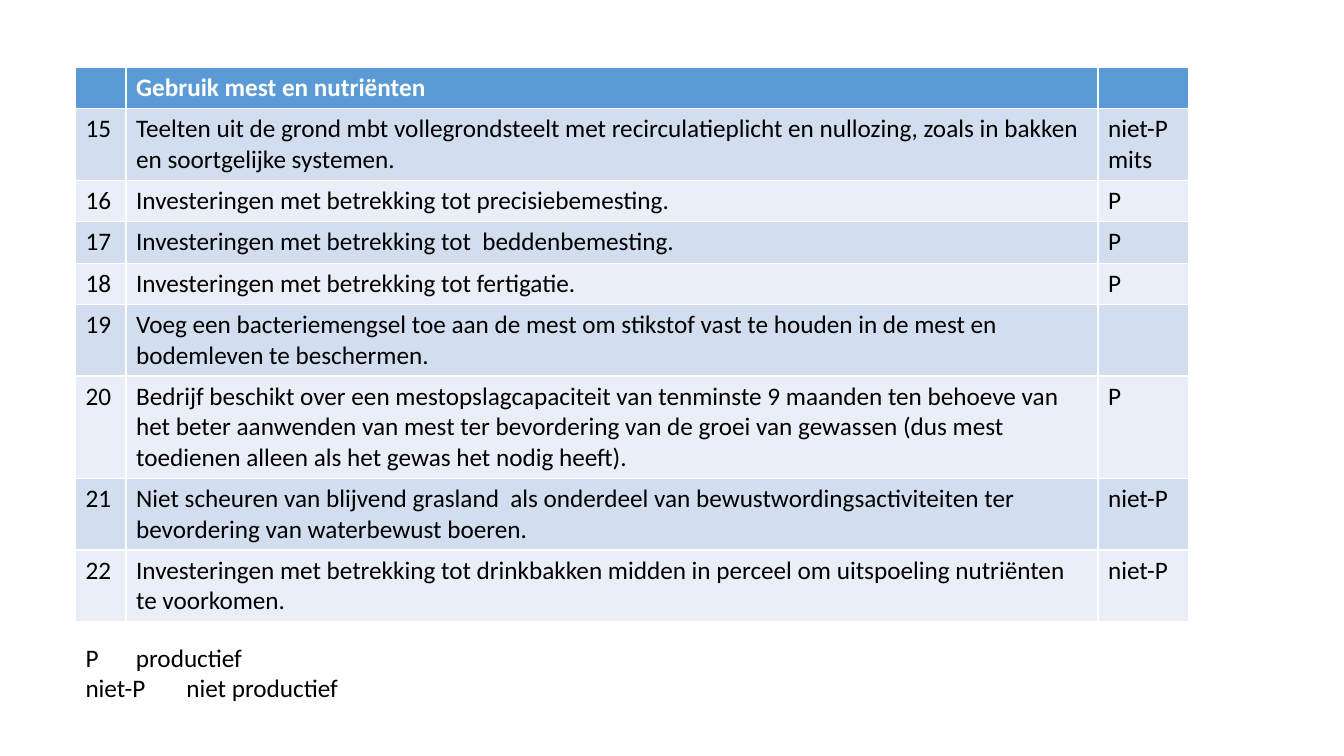
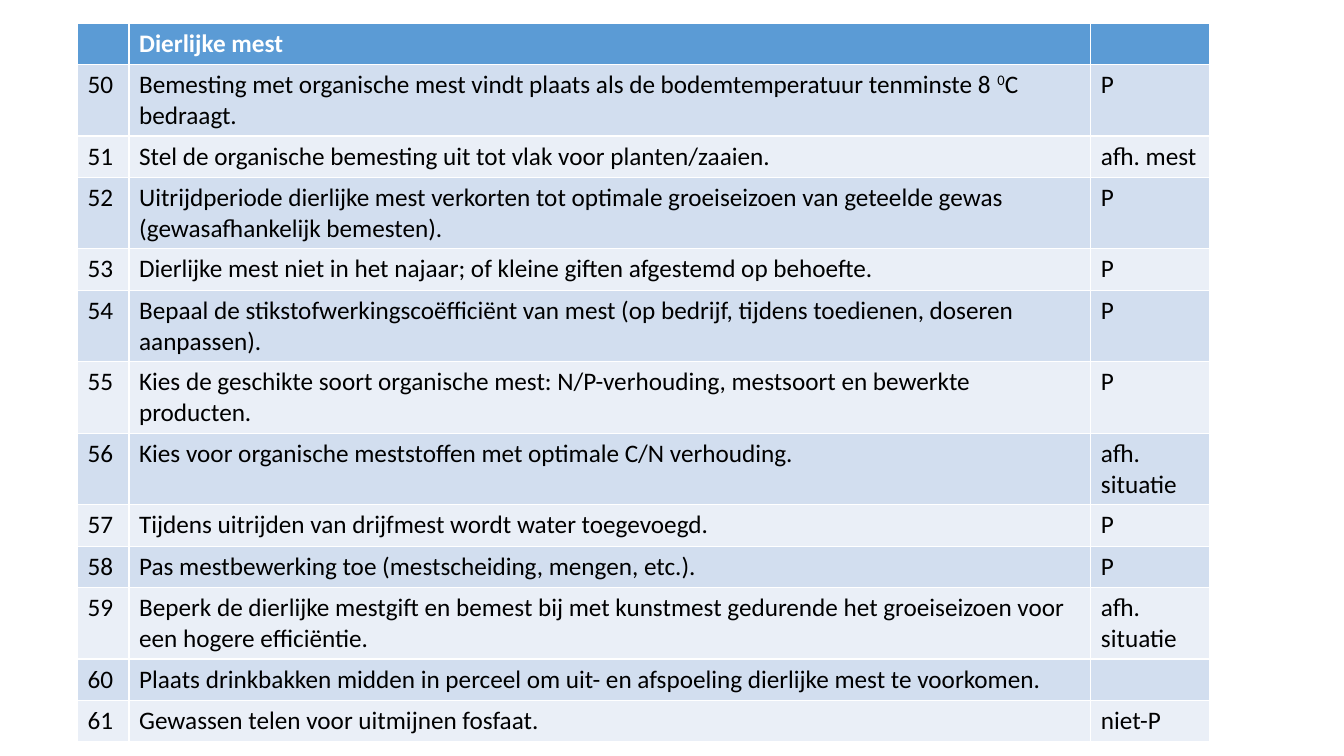
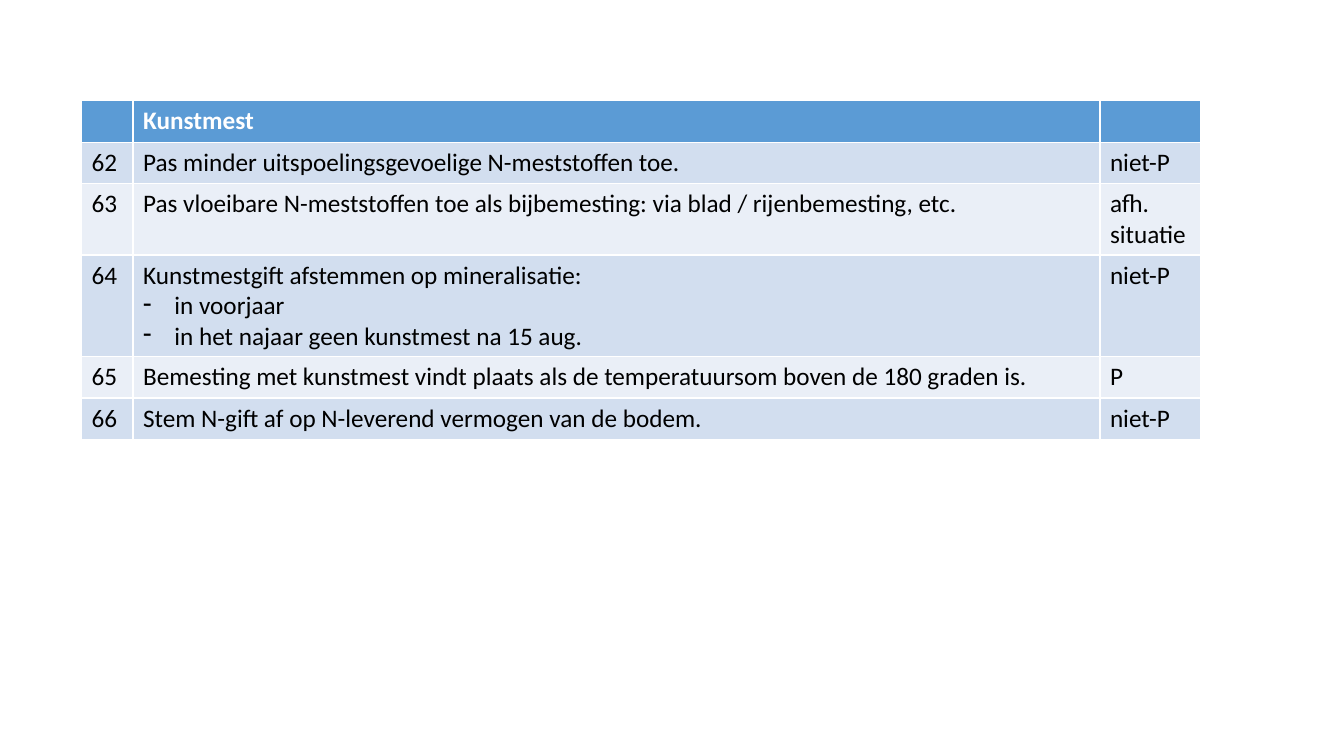
from lxml import etree
from pptx import Presentation
from pptx import util as u
from pptx.dml.color import RGBColor
from pptx.oxml import ns

HEADER_BLUE = RGBColor(0x5B, 0x9B, 0xD5)
BAND_DARK = RGBColor(0xD2, 0xDE, 0xEF)
BAND_LIGHT = RGBColor(0xEA, 0xEF, 0xF7)
WHITE = RGBColor(0xFF, 0xFF, 0xFF)
BLACK = RGBColor(0x00, 0x00, 0x00)

FONT = "Calibri"
SIZE = u.Pt(18)
ROW_HEIGHT = u.Inches(0.41)
LINE_HEIGHT = u.Inches(0.3)
BULLET = "- "
SUPERSCRIPT = "^"  # encloses raised text


class Deck:
    """Holds the shared style and the current slide."""

    def __init__(self):
        self.presentation = Presentation()
        self.presentation.slide_width = u.Inches(13.33)
        self.presentation.slide_height = u.Inches(7.5)
        self.slide = None

    def new_slide(self):
        blank = self.presentation.slide_layouts[6]
        self.slide = self.presentation.slides.add_slide(blank)

    def fill_text(self, frame, lines, color=BLACK, bold=False):
        frame.text = "\n".join(line.removeprefix(BULLET) for line in lines)
        for line, paragraph in zip(lines, frame.paragraphs):
            if line.startswith(BULLET):
                self.dash(paragraph)
            if SUPERSCRIPT in line:
                paragraph.text = ""
                for index, part in enumerate(line.split(SUPERSCRIPT)):
                    run = paragraph.add_run()
                    run.text = part
                    if index % 2:
                        run.font._element.set("baseline", "30000")
            for run in paragraph.runs:
                run.font.name, run.font.size = FONT, SIZE
                run.font.bold, run.font.color.rgb = bold, color

    def dash(self, paragraph):
        properties = paragraph._p.get_or_add_pPr()
        indent = u.Inches(0.31)
        properties.set("marL", str(indent))
        properties.set("indent", str(-indent))
        etree.SubElement(properties, ns.qn("a:buChar")).set("char", "-")

    def measures(self, left, top, widths, heading, entries):
        """Table of numbered measures: (text, verdict, lines high)."""
        first, rows = entries
        table = self.slide.shapes.add_table(
            len(rows) + 1, len(widths), u.Inches(left), u.Inches(top),
            u.Inches(sum(widths)), ROW_HEIGHT * (len(rows) + 1)).table
        for column, width in zip(table.columns, widths):
            column.width = u.Inches(width)

        # Heading row
        table.rows[0].height = ROW_HEIGHT
        for cell, label in zip(table.rows[0].cells, ("", heading, "")):
            self.cell(cell, label, HEADER_BLUE, WHITE, True)

        # Banded rows
        for index, (measure, verdict, height) in enumerate(rows):
            row = table.rows[index + 1]
            row.height = ROW_HEIGHT + LINE_HEIGHT * (height - 1)
            band = BAND_LIGHT if index % 2 else BAND_DARK
            for cell, content in zip(row.cells, (str(first + index), measure, verdict)):
                self.cell(cell, content, band)

    def cell(self, cell, content, fill, color=BLACK, bold=False):
        cell.fill.solid()
        cell.fill.fore_color.rgb = fill
        self.fill_text(cell.text_frame, content.split("\n"), color, bold)

    def legend(self, left, top, width, height, lines):
        box = self.slide.shapes.add_textbox(
            u.Inches(left), u.Inches(top), u.Inches(width), u.Inches(height))
        box.text_frame.word_wrap = True
        self.fill_text(box.text_frame, lines)


NUTRIENTS = (15, [
    ("Teelten uit de grond mbt vollegrondsteelt met recirculatieplicht en nullozing, "
     "zoals in bakken en soortgelijke systemen.", "niet-P mits", 2),
    ("Investeringen met betrekking tot precisiebemesting.", "P", 1),
    ("Investeringen met betrekking tot  beddenbemesting.", "P", 1),
    ("Investeringen met betrekking tot fertigatie.", "P", 1),
    ("Voeg een bacteriemengsel toe aan de mest om stikstof vast te houden in de mest "
     "en bodemleven te beschermen.", "", 2),
    ("Bedrijf beschikt over een mestopslagcapaciteit van tenminste 9 maanden ten behoeve "
     "van het beter aanwenden van mest ter bevordering van de groei van gewassen "
     "(dus mest toedienen alleen als het gewas het nodig heeft).", "P", 3),
    ("Niet scheuren van blijvend grasland  als onderdeel van bewustwordingsactiviteiten "
     "ter bevordering van waterbewust boeren.", "niet-P", 2),
    ("Investeringen met betrekking tot drinkbakken midden in perceel om uitspoeling "
     "nutriënten te voorkomen.", "niet-P", 2),
])

MANURE = (50, [
    ("Bemesting met organische mest vindt plaats als de bodemtemperatuur tenminste "
     "8 ^0^C bedraagt.", "P", 2),
    ("Stel de organische bemesting uit tot vlak voor planten/zaaien.", "afh. mest", 1),
    ("Uitrijdperiode dierlijke mest verkorten tot optimale groeiseizoen van geteelde "
     "gewas (gewasafhankelijk bemesten).", "P", 2),
    ("Dierlijke mest niet in het najaar; of kleine giften afgestemd op behoefte.", "P", 1),
    ("Bepaal de stikstofwerkingscoëfficiënt van mest (op bedrijf, tijdens toedienen, "
     "doseren aanpassen).", "P", 2),
    ("Kies de geschikte soort organische mest: N/P-verhouding, mestsoort en bewerkte "
     "producten.", "P", 2),
    ("Kies voor organische meststoffen met optimale C/N verhouding.", "afh. situatie", 2),
    ("Tijdens uitrijden van drijfmest wordt water toegevoegd.", "P", 1),
    ("Pas mestbewerking toe (mestscheiding, mengen, etc.).", "P", 1),
    ("Beperk de dierlijke mestgift en bemest bij met kunstmest gedurende het "
     "groeiseizoen voor een hogere efficiëntie.", "afh. situatie", 2),
    ("Plaats drinkbakken midden in perceel om uit- en afspoeling dierlijke mest te "
     "voorkomen.", "", 1),
    ("Gewassen telen voor uitmijnen fosfaat.", "niet-P", 1),
])

FERTILISER = (62, [
    ("Pas minder uitspoelingsgevoelige N-meststoffen toe.", "niet-P", 1),
    ("Pas vloeibare N-meststoffen toe als bijbemesting: via blad / rijenbemesting, etc.",
     "afh. situatie", 2),
    ("Kunstmestgift afstemmen op mineralisatie:\n- in voorjaar\n"
     "- in het najaar geen kunstmest na 15 aug.", "niet-P", 3),
    ("Bemesting met kunstmest vindt plaats als de temperatuursom boven de 180 graden is.",
     "P", 1),
    ("Stem N-gift af op N-leverend vermogen van de bodem.", "niet-P", 1),
])


def main():
    deck = Deck()

    # Use of manure and nutrients
    deck.new_slide()
    deck.measures(0.75, 0.67, (0.5, 9.64, 0.9), "Gebruik mest en nutriënten", NUTRIENTS)
    deck.legend(0.75, 6.32, 2.77, 0.71, ["P\tproductief", "niet-P \tniet productief"])

    # Animal manure
    deck.new_slide()
    deck.measures(0.77, 0.23, (0.51, 9.54, 1.18), "Dierlijke mest", MANURE)

    # Artificial fertiliser
    deck.new_slide()
    deck.measures(0.81, 1, (0.51, 9.59, 1), "Kunstmest", FERTILISER)

    deck.presentation.save("out.pptx")


if __name__ == "__main__":
    main()
